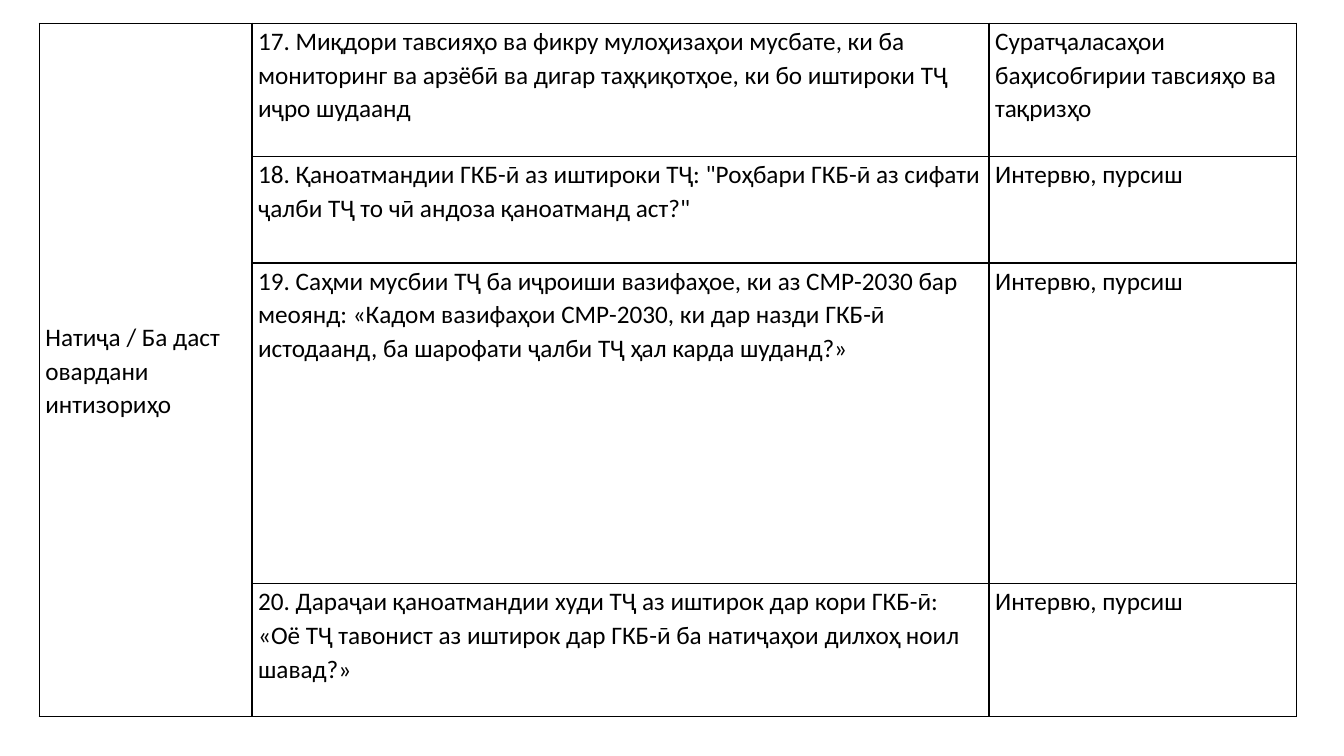
from dataclasses import dataclass

from lxml.etree import SubElement
from pptx import Presentation
from pptx.dml.color import RGBColor
from pptx.enum.text import MSO_ANCHOR
from pptx.oxml.ns import qn
from pptx.table import _Cell
from pptx.util import Emu, Pt

EMU_PER_PX = 9144
BLACK = RGBColor(0x00, 0x00, 0x00)
COLUMN_WIDTHS = (211, 731, 305)
INTERVIEW = "Интервю, пурсиш"
CRITERION = "Натиҷа / Ба даст овардани интизориҳо"


@dataclass
class Indicator:
    height: int
    question: str
    source: str


INDICATORS = [
    Indicator(
        132,
        "17. Миқдори тавсияҳо ва фикру мулоҳизаҳои мусбате, ки ба мониторинг ва арзёбӣ "
        "ва дигар таҳқиқотҳое, ки бо иштироки ТҶ иҷро шудаанд",
        "Суратҷаласаҳои баҳисобгирии тавсияҳо ва тақризҳо",
    ),
    Indicator(
        106,
        "18. Қаноатмандии ГКБ-ӣ аз иштироки ТҶ: \"Роҳбари ГКБ-ӣ аз сифати ҷалби ТҶ "
        "то чӣ андоза қаноатманд аст?\"",
        INTERVIEW,
    ),
    Indicator(
        318,
        "19. Саҳми мусбии ТҶ ба иҷроиши вазифаҳое, ки аз СМР-2030 бар меоянд: "
        "«Кадом вазифаҳои СМР-2030, ки дар назди ГКБ-ӣ истодаанд, "
        "ба шарофати ҷалби ТҶ ҳал карда шуданд?»",
        INTERVIEW,
    ),
    Indicator(
        132,
        "20. Дараҷаи қаноатмандии худи ТҶ аз иштирок дар кори ГКБ-ӣ: «Оё ТҶ тавонист "
        "аз иштирок дар ГКБ-ӣ ба натиҷаҳои дилхоҳ ноил шавад?»",
        INTERVIEW,
    ),
]


def px(length: int) -> Emu:
    return Emu(length * EMU_PER_PX)


def outline_cell(cell: _Cell, color: RGBColor = BLACK, width: int = 1) -> None:
    properties = cell._tc.get_or_add_tcPr()
    for side in ("a:lnL", "a:lnR", "a:lnT", "a:lnB"):
        line = SubElement(properties, qn(side), w=str(Pt(width)))
        fill = SubElement(line, qn("a:solidFill"))
        SubElement(fill, qn("a:srgbClr"), val=str(color))
    cell.fill.background()


def write_cell(
    cell: _Cell,
    text: str,
    *,
    size: int = 18,
    font: str = "Calibri",
    color: RGBColor = BLACK,
    spacing: float = 1.1,
    anchor: MSO_ANCHOR = MSO_ANCHOR.TOP,
) -> None:
    cell.margin_left = cell.margin_right = px(6)
    cell.margin_top = cell.margin_bottom = px(0)
    cell.vertical_anchor = anchor
    para = cell.text_frame.paragraphs[0]
    para.line_spacing = spacing
    span = para.add_run()
    span.text = text
    span.font.size = Pt(size)
    span.font.name = font
    span.font.color.rgb = color


def main() -> None:
    deck = Presentation()
    deck.slide_width, deck.slide_height = px(1333), px(750)
    page = deck.slides.add_slide(deck.slide_layouts[6])

    height = sum(indicator.height for indicator in INDICATORS)
    table = page.shapes.add_table(
        len(INDICATORS), len(COLUMN_WIDTHS),
        px(39), px(23), px(sum(COLUMN_WIDTHS)), px(height),
    ).table
    table.first_row = table.horz_banding = False

    for column, width in zip(table.columns, COLUMN_WIDTHS):
        column.width = px(width)
    for cell in table.iter_cells():
        outline_cell(cell)
    for index, indicator in enumerate(INDICATORS):
        table.rows[index].height = px(indicator.height)
        write_cell(table.cell(index, 1), indicator.question)
        write_cell(table.cell(index, 2), indicator.source)

    criterion = table.cell(0, 0)
    criterion.merge(table.cell(len(INDICATORS) - 1, 0))
    write_cell(criterion, CRITERION, anchor=MSO_ANCHOR.MIDDLE)

    deck.save("out.pptx")


if __name__ == "__main__":
    main()
